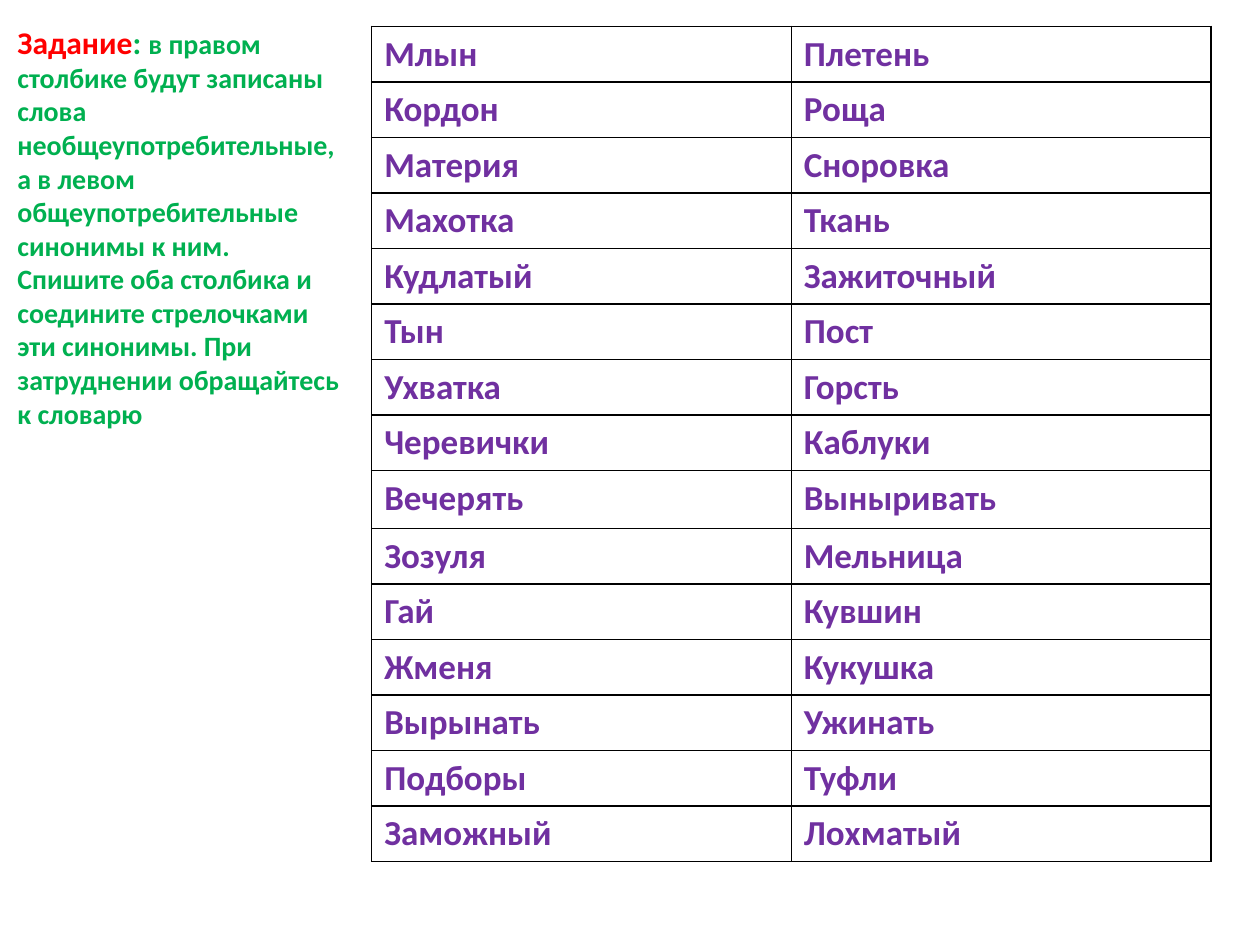
from lxml.etree import SubElement
from pptx import Presentation
from pptx.dml.color import RGBColor
from pptx.enum.text import MSO_AUTO_SIZE
from pptx.oxml.ns import qn
from pptx.util import Inches, Pt

COLORS = {
    "label": "FF0000",
    "task": "00B050",
    "word": "7030A0",
    "border": "000000",
}
FONT = "Calibri"

WORD_ROWS = [
    ("Млын", "Плетень"),
    ("Кордон", "Роща"),
    ("Материя", "Сноровка"),
    ("Махотка", "Ткань"),
    ("Кудлатый", "Зажиточный"),
    ("Тын", "Пост"),
    ("Ухватка", "Горсть"),
    ("Черевички", "Каблуки"),
    ("Вечерять", "Выныривать"),
    ("Зозуля", "Мельница"),
    ("Гай", "Кувшин"),
    ("Жменя", "Кукушка"),
    ("Вырынать", "Ужинать"),
    ("Подборы", "Туфли"),
    ("Заможный", "Лохматый"),
]
TALL_ROW = 8

TASK_RUNS = [
    ("Задание", 18, "label"),
    (": ", 18, "task"),
    ("в правом столбике будут записаны слова необщеупотребительные, "
     "а в левом общеупотребительные синонимы к ним.  Спишите оба столбика "
     "и соедините стрелочками эти синонимы. При затруднении обращайтесь "
     "к словарю", 16, "task"),
]


def style_font(font, size, color):
    font.name = FONT
    font.size = Pt(size)
    font.bold = True
    font.color.rgb = RGBColor.from_string(COLORS[color])


def add_borders(cell):
    properties = cell._tc.get_or_add_tcPr()
    for side in ("a:lnL", "a:lnR", "a:lnT", "a:lnB"):
        line = SubElement(properties, qn(side), w=str(Pt(1)))
        fill = SubElement(line, qn("a:solidFill"))
        SubElement(fill, qn("a:srgbClr"), val=COLORS["border"])


def fill_cell(cell, word):
    add_borders(cell)
    cell.fill.background()
    cell.text = word
    style_font(cell.text_frame.paragraphs[0].font, 20, "word")


def add_word_table(slide):
    table = slide.shapes.add_table(
        len(WORD_ROWS), 2,
        Inches(2.95), Inches(0.21), Inches(6.67), Inches(6.2),
    ).table
    table.first_row = False
    table.horz_banding = False
    for column in table.columns:
        column.width = Inches(3.33)
    for index, words in enumerate(WORD_ROWS):
        table.rows[index].height = Inches(0.46 if index == TALL_ROW else 0.41)
        for column_index, word in enumerate(words):
            fill_cell(table.cell(index, column_index), word)


def add_task(slide):
    task = slide.shapes.add_textbox(
        Inches(0.04), Inches(0.13), Inches(2.83), Inches(3.37)
    ).text_frame
    task.word_wrap = True
    task.auto_size = MSO_AUTO_SIZE.SHAPE_TO_FIT_TEXT
    paragraph = task.paragraphs[0]
    for text, size, color in TASK_RUNS:
        run = paragraph.add_run()
        run.text = text
        style_font(run.font, size, color)


def main():
    presentation = Presentation()
    presentation.slide_width = Inches(10)
    presentation.slide_height = Inches(7.5)
    slide = presentation.slides.add_slide(presentation.slide_layouts[6])
    add_word_table(slide)
    add_task(slide)
    presentation.save("out.pptx")


if __name__ == "__main__":
    main()
